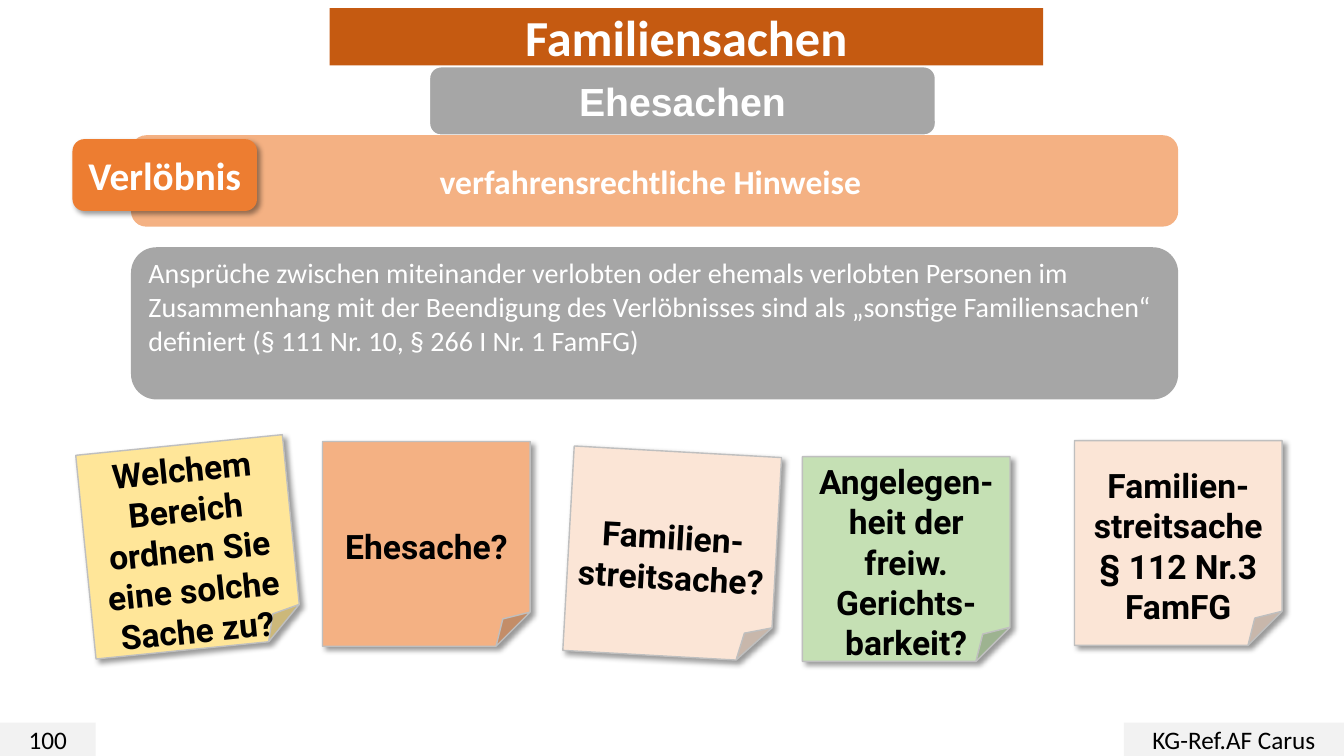
import dataclasses
import typing

import lxml.etree
import pptx
import pptx.dml.color
import pptx.enum.shapes
import pptx.enum.text
import pptx.oxml.ns
import pptx.util

Pt = pptx.util.Pt
Kind = pptx.enum.shapes.MSO_SHAPE
Align = pptx.enum.text.PP_ALIGN


@dataclasses.dataclass(frozen=True)
class Theme:
    white: str = "FFFFFF"
    black: str = "000000"
    rust: str = "C55A11"
    orange: str = "ED7D31"
    peach: str = "F4B183"
    blush: str = "FBE5D6"
    yellow: str = "FFE699"
    green: str = "C5E0B4"
    grey: str = "A6A6A6"
    edge: str = "BFBFBF"
    pale: str = "F2F2F2"
    sans: str = "Calibri"
    arial: str = "Arial"
    hand: str = "Roboto"
    title: int = 36
    head: int = 28
    note: int = 24
    body: int = 20
    foot: int = 18


THEME = Theme()


@dataclasses.dataclass(frozen=True)
class Box:
    left: float
    top: float
    width: float
    height: float
    text: str
    fill: str
    size: int
    kind: typing.Any = Kind.ROUNDED_RECTANGLE
    font: str = THEME.sans
    ink: str = THEME.white
    bold: bool = True
    line: str = ""
    shade: bool = False
    turn: float = 0
    align: typing.Any = Align.CENTER
    pad: tuple = (7.2, 3.6, 7.2, 3.6)


def make_note(left: float, top: float, text: str, fill: str, turn: float = 0) -> Box:
    return Box(left, top, 148.3, 146.2, text, fill, THEME.note, Kind.FOLDED_CORNER,
               THEME.hand, THEME.black, line=THEME.edge, shade=True, turn=turn,
               pad=(7.2, 31.7, 7.2, 3.6))


def make_foot(left: float, width: float, text: str) -> Box:
    return Box(left, 516.2, width, 23.8, text, THEME.pale, THEME.foot,
               Kind.RECTANGLE, ink=THEME.black, bold=False)


TITLE = Box(235.4, 5.8, 509.8, 41, "Familiensachen", THEME.rust, THEME.title)
BODY = Box(
    93.6, 176.6, 748, 108.7,
    "Ansprüche zwischen miteinander verlobten oder ehemals verlobten Personen im "
    "Zusammenhang mit der Beendigung des Verlöbnisses sind als „sonstige "
    "Familiensachen“ definiert (§ 111 Nr. 10, § 266 I Nr. 1 FamFG)",
    THEME.grey, THEME.body, bold=False, align=Align.LEFT, pad=(7.2, 3.6, 7.2, 28))
PARTS = [
    make_foot(0, 68.4, "100"),
    make_foot(802.8, 157.2, "KG-Ref.AF Carus"),
    Box(306.8, 47.7, 361.4, 48.8, "Ehesachen", THEME.grey, THEME.head,
        font=THEME.arial, line=THEME.white),
    Box(93.6, 96.6, 748, 65.3, "verfahrensrechtliche Hinweise", THEME.peach,
        THEME.note, pad=(7.2, 3.6, 13, 3.6)),
    Box(51.8, 99.4, 131.8, 51.3, "Verlöbnis", THEME.orange, THEME.head,
        shade=True, pad=(4, 3.6, 4, 3.6)),
    make_note(61, 317.5, "Welchem Bereich ordnen Sie eine solche Sache zu?",
              THEME.yellow, -5.7),
    make_note(230.4, 315.4, "Ehesache?", THEME.peach),
    make_note(406, 322.6, "Familien-streitsache?", THEME.blush, 3.2),
    make_note(573.2, 326.2, "Angelegen-heit der freiw. Gerichts-barkeit?", THEME.green),
    make_note(767.5, 314.8, "Familien-streitsache\n§ 112 Nr.3 FamFG", THEME.blush),
]


def tint(code: str) -> pptx.dml.color.RGBColor:
    return pptx.dml.color.RGBColor.from_string(code)


def add_node(host: typing.Any, tag: str, **attrs: str) -> typing.Any:
    return lxml.etree.SubElement(host, pptx.oxml.ns.qn(tag), attrs)


def set_text(frame: typing.Any, text: str, *, font: str, size: int, ink: str,
             bold: bool, align: typing.Any, pad: tuple) -> None:
    frame.word_wrap = True
    frame.auto_size = pptx.enum.text.MSO_AUTO_SIZE.NONE
    frame.vertical_anchor = pptx.enum.text.MSO_ANCHOR.MIDDLE
    (frame.margin_left, frame.margin_top,
     frame.margin_right, frame.margin_bottom) = map(Pt, pad)
    frame.text = text
    for para in frame.paragraphs:
        para.alignment = align
        para.space_before = Pt(0)
        style = para.font
        style.name, style.size, style.bold = font, Pt(size), bold
        style.color.rgb = tint(ink)
        for run in para.runs:
            run.font.name, run.font.size, run.font.bold = font, Pt(size), bold
            run.font.color.rgb = tint(ink)


def add_shade(shape: typing.Any) -> None:
    group = shape._element.spPr.find(pptx.oxml.ns.qn("a:effectLst"))
    cast = add_node(group, "a:outerShdw", blurRad=str(Pt(4)), dist=str(Pt(3)),
                    dir="2700000", algn="tl", rotWithShape="0")
    color = add_node(cast, "a:srgbClr", val=THEME.black)
    add_node(color, "a:alpha", val="40000")


def dress(shape: typing.Any, box: Box) -> None:
    shape.fill.solid()
    shape.fill.fore_color.rgb = tint(box.fill)
    if box.line:
        shape.line.color.rgb = tint(box.line)
        shape.line.width = Pt(1)
    else:
        shape.line.fill.background()
    set_text(shape.text_frame, box.text, font=box.font, size=box.size, ink=box.ink,
             bold=box.bold, align=box.align, pad=box.pad)


def draw_box(slide: typing.Any, box: Box) -> None:
    place = map(Pt, (box.left, box.top, box.width, box.height))
    shape = slide.shapes.add_shape(box.kind, *place)
    shape.rotation = box.turn
    shape.shadow.inherit = False
    dress(shape, box)
    if box.shade:
        add_shade(shape)


def fill_holder(shape: typing.Any, box: Box) -> None:
    shape.left, shape.top = Pt(box.left), Pt(box.top)
    shape.width, shape.height = Pt(box.width), Pt(box.height)
    form = add_node(shape._element.spPr, "a:prstGeom", prst="roundRect")
    add_node(form, "a:avLst")
    dress(shape, box)


def main() -> None:
    deck = pptx.Presentation()
    deck.slide_width, deck.slide_height = Pt(960), Pt(540)
    slide = deck.slides.add_slide(deck.slide_layouts[1])
    fill_holder(slide.shapes.title, TITLE)
    body = slide.placeholders[1]
    fill_holder(body, BODY)
    props = body.text_frame.paragraphs[0]._p.get_or_add_pPr()
    props.set("marL", "0")
    props.set("indent", "0")
    add_node(props, "a:buNone")
    fonts = props.find(pptx.oxml.ns.qn("a:defRPr"))
    if fonts is not None:
        props.append(fonts)
    for box in PARTS:
        draw_box(slide, box)
    deck.save("out.pptx")


if __name__ == "__main__":
    main()
